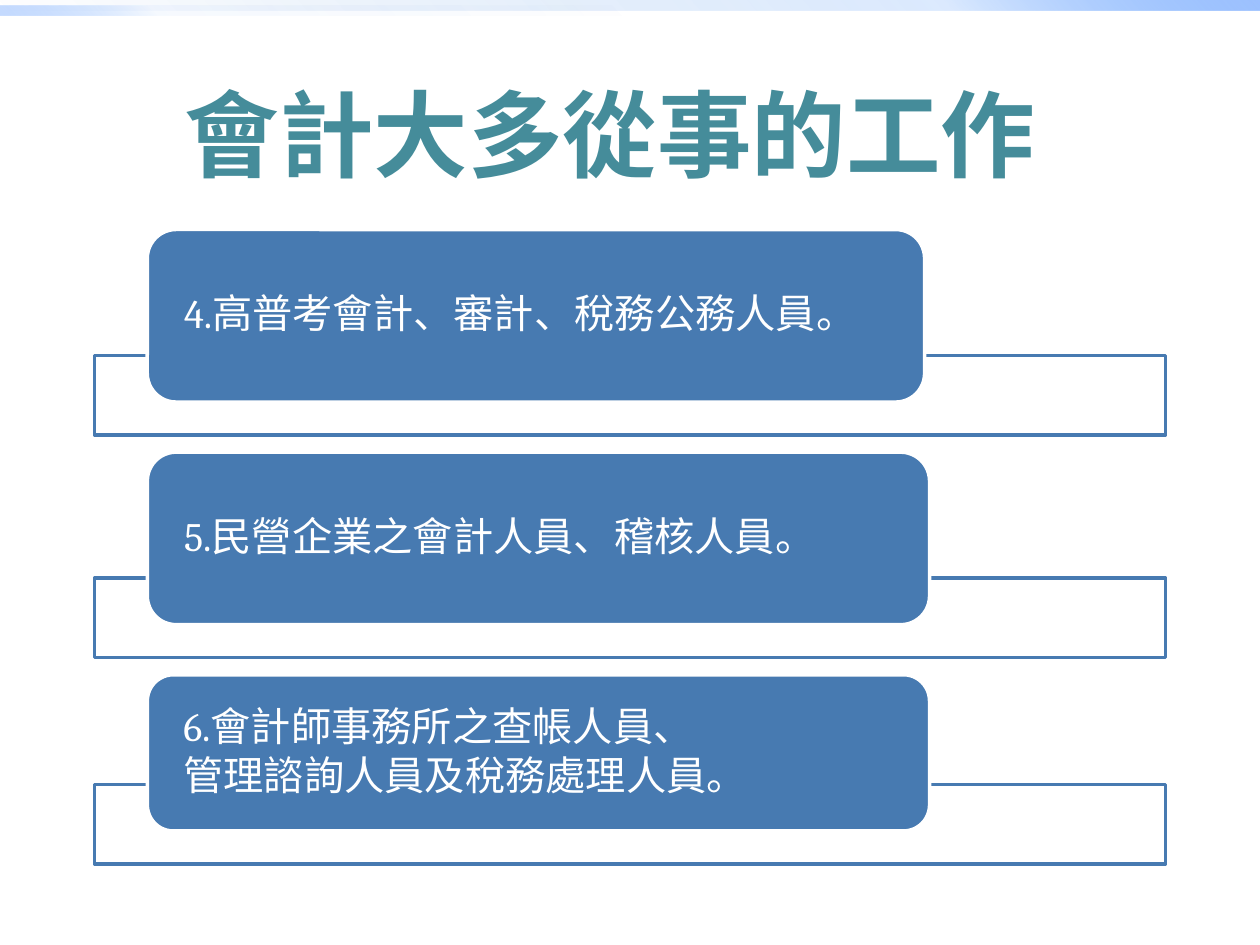
"""Build a slide listing the jobs that accountants mostly do."""
import pptx
import pptx.dml.color
import pptx.enum.shapes
import pptx.enum.text
import pptx.oxml
import pptx.oxml.ns
import pptx.util
from lxml import etree

Pt = pptx.util.Pt
RGBColor = pptx.dml.color.RGBColor
Shape = pptx.enum.shapes.MSO_SHAPE
Align = pptx.enum.text.PP_ALIGN
qn = pptx.oxml.ns.qn

WHITE = RGBColor(0xFF, 0xFF, 0xFF)
BLUE = RGBColor(0x47, 0x7A, 0xB1)
TEAL = RGBColor(0x45, 0x8C, 0x9A)
BAND_COLORS = [
    RGBColor(0x00, 0x58, 0xB7),
    RGBColor(0x4F, 0x95, 0xFF),
    RGBColor(0x9E, 0xC2, 0xFF),
]
BAND_STOPS = [0, 75, 100]
FONT = "Cambria"

TITLE = "會計大多從事的工作"
BANDS = [
    {"top": 0, "width": 720, "angle": 315, "opacities": [0, 20, 100]},
    {"top": 3, "width": 360, "angle": 135, "opacities": [0, 5, 60]},
]
JOBS = [
    {"lines": ["4.高普考會計、審計、稅務公務人員。"], "width": 444.2, "height": 98.6},
    {"lines": ["5.民營企業之會計人員、稽核人員。"], "width": 447, "height": 98.6},
    {"lines": ["6.會計師事務所之查帳人員、", "管理諮詢人員及稅務處理人員。"],
     "width": 447, "height": 89.3},
]

BAND_HEIGHT = 6
LABEL_LEFT, FIRST_TOP = 84.2, 131.2
FRAME_LEFT, FRAME_WIDTH, FRAME_HEIGHT = 54, 612, 45.4
FRAME_OVERLAP = 26.6
JOB_GAP = 9.8


def add_panel(page, kind, left, top, width, height, fill=None, line=None):
    panel = page.shapes.add_shape(kind, Pt(left), Pt(top), Pt(width), Pt(height))
    panel.shadow.inherit = False
    if fill is not None:
        panel.fill.solid()
        panel.fill.fore_color.rgb = fill
    if line is None:
        panel.line.fill.background()
    else:
        panel.line.color.rgb = line
        panel.line.width = Pt(2)
    return panel


def set_opacity(color, percent):
    etree.SubElement(color, qn("a:alpha")).set("val", str(percent * 1000))


def set_gradient(band, angle, opacities):
    stops = "".join(
        f'<a:gs pos="{stop * 1000}"><a:srgbClr val="{color}"/></a:gs>'
        for stop, color in zip(BAND_STOPS, BAND_COLORS)
    )
    gradient = pptx.oxml.parse_xml(
        f'<a:gradFill {pptx.oxml.ns.nsdecls("a")} rotWithShape="1">'
        f'<a:gsLst>{stops}</a:gsLst><a:lin ang="{angle * 60000}" scaled="0"/></a:gradFill>'
    )
    for color, opacity in zip(gradient.iter(qn("a:srgbClr")), opacities):
        set_opacity(color, opacity)
    properties = band.fill._xPr
    properties.find(qn("a:prstGeom")).addnext(gradient)


def write_text(box, lines, size, color, bold=False, align=Align.LEFT,
               spacing=None, after=None, inset=None, wrap=True, outline=None):
    frame = box.text_frame
    frame.word_wrap = wrap
    if inset is not None:
        frame.margin_left = frame.margin_right = Pt(inset)
        frame.margin_top = frame.margin_bottom = 0
    for index, line in enumerate(lines):
        para = frame.add_paragraph() if index else frame.paragraphs[0]
        para.alignment = align
        para.line_spacing = spacing
        para.space_after = after
        span = para.add_run()
        span.text = line
        span.font.name = FONT
        span.font.size = Pt(size)
        span.font.bold = bold
        span.font.color.rgb = color
        if outline is not None:
            span.font._element.insert(0, pptx.oxml.parse_xml(
                f'<a:ln {pptx.oxml.ns.nsdecls("a")} w="{Pt(outline)}"><a:solidFill>'
                f'<a:srgbClr val="{color}"/></a:solidFill></a:ln>'
            ))


def add_job(page, job, top):
    bottom = top + job["height"]
    frame = add_panel(page, Shape.RECTANGLE, FRAME_LEFT, bottom - FRAME_OVERLAP,
                      FRAME_WIDTH, FRAME_HEIGHT, WHITE, BLUE)
    set_opacity(frame.fill._xPr.find(qn("a:solidFill"))[0], 90)
    label = add_panel(page, Shape.ROUNDED_RECTANGLE, LABEL_LEFT, top,
                      job["width"], job["height"], BLUE, WHITE)
    label.text_frame.vertical_anchor = pptx.enum.text.MSO_ANCHOR.MIDDLE
    write_text(label, job["lines"], 23, WHITE, spacing=0.9, after=Pt(3), inset=16.2)
    return bottom - FRAME_OVERLAP + FRAME_HEIGHT + JOB_GAP


def main():
    deck = pptx.Presentation()
    deck.slide_width, deck.slide_height = Pt(720), Pt(540)
    page = deck.slides.add_slide(deck.slide_layouts[6])
    for band in BANDS:
        strip = add_panel(page, Shape.RECTANGLE, 0, band["top"], band["width"], BAND_HEIGHT)
        set_gradient(strip, band["angle"], band["opacities"])
    top = FIRST_TOP
    for job in JOBS:
        top = add_job(page, job, top)
    title = page.shapes.add_textbox(Pt(95.8), Pt(39.6), Pt(505.4), Pt(72.7))
    title.text_frame.auto_size = pptx.enum.text.MSO_AUTO_SIZE.SHAPE_TO_FIT_TEXT
    write_text(title, [TITLE], 54, TEAL, bold=True, align=Align.CENTER,
               wrap=False, outline=1.42)
    deck.save("out.pptx")


if __name__ == "__main__":
    main()
